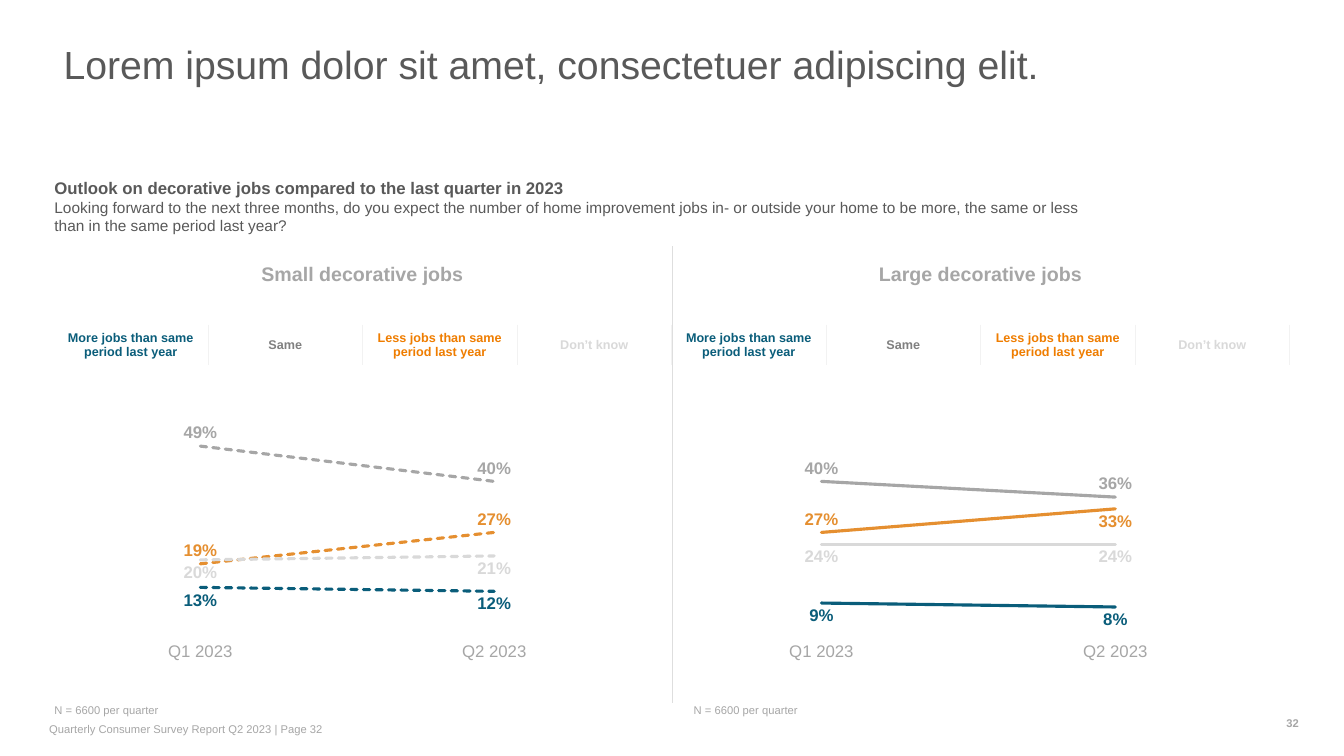
"""Build the slide on the outlook for small and large decorative jobs."""
from dataclasses import dataclass

from lxml import etree
from pptx import Presentation
from pptx.chart.data import CategoryChartData
from pptx.dml.color import RGBColor
from pptx.enum.chart import XL_CHART_TYPE, XL_LABEL_POSITION, XL_MARKER_STYLE, XL_TICK_MARK
from pptx.enum.dml import MSO_LINE
from pptx.enum.shapes import MSO_CONNECTOR
from pptx.enum.text import MSO_ANCHOR, MSO_AUTO_SIZE, PP_ALIGN
from pptx.oxml import parse_xml
from pptx.oxml.ns import nsdecls, qn
from pptx.util import Inches, Pt

LINE_CHART = XL_CHART_TYPE.LINE
ABOVE, BELOW = XL_LABEL_POSITION.ABOVE, XL_LABEL_POSITION.BELOW
NO_MARKER, NO_TICK = XL_MARKER_STYLE.NONE, XL_TICK_MARK.NONE
SQUARE_DOT = MSO_LINE.SQUARE_DOT
STRAIGHT = MSO_CONNECTOR.STRAIGHT
TOP, MIDDLE = MSO_ANCHOR.TOP, MSO_ANCHOR.MIDDLE
NO_AUTO_SIZE = MSO_AUTO_SIZE.NONE
LEFT, CENTER = PP_ALIGN.LEFT, PP_ALIGN.CENTER

FONT = "Arial"
DARK, GREY, PALE, BORDER = "595959", "A6A6A6", "D9D9D9", "F2F2F2"
NO_STYLE = "{2D5ABB26-0587-4C30-8999-92F81FD0307C}"
QUARTERS = ("Q1 2023", "Q2 2023")
PLOT_LAYOUT = {"layoutTarget": "inner", "xMode": "edge", "yMode": "edge",
               "x": "0", "y": "0", "w": "1", "h": "0.912"}


@dataclass(frozen=True)
class Answer:
    """An answer option with its heading colour, line colour and label side."""
    text: str
    heading_color: str
    line_color: str
    label_position: XL_LABEL_POSITION


@dataclass(frozen=True)
class Panel:
    """One half of the slide: heading, answer table, line chart and base size."""
    heading: str
    table_left: float
    chart_left: float
    note_left: float
    dashed: bool
    shares: tuple[tuple[float, float], ...]
    labels_moved_below: tuple[tuple[int, int], ...] = ()


@dataclass(frozen=True)
class Line:
    """A paragraph of text with its look."""
    text: str
    size: float
    color: str
    bold: bool = False
    align: PP_ALIGN = LEFT
    space_after: float = 0


ANSWERS = (
    Answer("More jobs than same period last year", "0A5D7A", "0A5D7A", BELOW),
    Answer("Same", "808080", GREY, ABOVE),
    Answer("Less jobs than same period last year", "EF7D00", "E58F30", ABOVE),
    Answer("Don’t know", PALE, PALE, BELOW),
)
PANELS = (
    Panel("Small decorative jobs", 0.53, 0.53, 0.54, True,
          ((0.13, 0.12), (0.49, 0.4), (0.19, 0.27), (0.2, 0.21))),
    Panel("Large decorative jobs", 6.66, 6.69, 6.88, False,
          ((0.09, 0.08), (0.4, 0.36), (0.27, 0.33), (0.24, 0.24)), ((2, 1),)),
)


def rgb(color: str) -> RGBColor:
    """Turn a hex string into a colour."""
    return RGBColor.from_string(color)


def set_font(font, size: float, color: str, bold: bool = False) -> None:
    """Format a font."""
    font.name, font.size, font.bold = FONT, Pt(size), bold
    font.color.rgb = rgb(color)


def write(text_frame, lines: tuple[Line, ...]) -> None:
    """Fill a text frame with formatted paragraphs."""
    for index, line in enumerate(lines):
        paragraph = text_frame.add_paragraph() if index else text_frame.paragraphs[0]
        paragraph.text = line.text
        paragraph.alignment = line.align
        paragraph.space_after = Pt(line.space_after)
        set_font(paragraph.font, line.size, line.color, line.bold)


def add_text(slide, box: tuple[float, ...], *lines: Line, inset: bool = False) -> None:
    """Add a text box; without inset its text is centred vertically on the box."""
    text_frame = slide.shapes.add_textbox(*map(Inches, box)).text_frame
    text_frame.word_wrap = True
    if not inset:
        text_frame.margin_left = text_frame.margin_right = 0
        text_frame.margin_top = text_frame.margin_bottom = 0
        text_frame.vertical_anchor = MIDDLE
    write(text_frame, lines)


def add_title(slide, text: str) -> None:
    """Place and format the title placeholder."""
    title = slide.shapes.title
    title.left, title.top, title.width, title.height = map(Inches, (0.53, 0.4, 12.61, 0.98))
    title.text_frame.vertical_anchor = TOP
    title.text_frame.auto_size = NO_AUTO_SIZE
    write(title.text_frame, (Line(text, 28, DARK, space_after=4),))
    title.text_frame.paragraphs[0].line_spacing = 0.9


def add_divider(slide) -> None:
    """Draw the vertical rule between the panels."""
    x = Inches(6.67)
    divider = slide.shapes.add_connector(STRAIGHT, x, Inches(6.97), x, Inches(2.44))
    divider.line.color.rgb = rgb("DEDEDE")
    divider.line.width = Pt(0.75)
    etree.SubElement(divider._element.spPr, qn("a:effectLst"))


def add_answer_table(slide, left: float) -> None:
    """Add the one-row table that serves as the chart legend."""
    frame = slide.shapes.add_table(1, len(ANSWERS), *map(Inches, (left, 3.22, 6.13, 0.4)))
    table = frame.table
    table.first_row = table.horz_banding = False
    table._tbl.tblPr.find(qn("a:tableStyleId")).text = NO_STYLE
    for cell, answer in zip(table.rows[0].cells, ANSWERS):
        cell.vertical_anchor = MIDDLE
        write(cell.text_frame, (Line(answer.text, 9, answer.heading_color, True, CENTER),))
        cell._tc.get_or_add_tcPr().append(parse_xml(
            f'<a:lnR {nsdecls("a")} w="{Pt(0.5)}"><a:solidFill>'
            f'<a:srgbClr val="{BORDER}"/></a:solidFill></a:lnR>'))
        cell.fill.background()


def set_plot_layout(chart) -> None:
    """Fix the inner plot area within the chart frame."""
    plot_area = chart._chartSpace.chart.plotArea
    for old_layout in plot_area.findall(qn("c:layout")):
        plot_area.remove(old_layout)
    layout = etree.Element(qn("c:layout"))
    manual = etree.SubElement(layout, qn("c:manualLayout"))
    for name, value in PLOT_LAYOUT.items():
        etree.SubElement(manual, qn(f"c:{name}")).set("val", value)
    plot_area.insert(0, layout)


def format_axes(chart) -> None:
    """Show only the quarter names and scale the values from 0 to 100%."""
    values, quarters = chart.value_axis, chart.category_axis
    values.minimum_scale, values.maximum_scale = 0, 1
    values.has_major_gridlines = values.visible = False
    quarters.major_tick_mark = quarters.minor_tick_mark = NO_TICK
    quarters.format.line.fill.background()
    set_font(quarters.tick_labels.font, 12, GREY)


def add_share_chart(slide, panel: Panel) -> None:
    """Add the line chart of answer shares per quarter."""
    data = CategoryChartData(number_format="0%")
    data.categories = QUARTERS
    for answer, shares in zip(ANSWERS, panel.shares):
        data.add_series(answer.text, shares)
    box = map(Inches, (panel.chart_left, 2.44, 5.83, 4.27))
    chart = slide.shapes.add_chart(LINE_CHART, *box, data).chart
    chart.has_legend = chart.has_title = False
    set_font(chart.font, 10, "000000")
    chart.plots[0].vary_by_categories = False
    set_plot_layout(chart)
    format_axes(chart)
    for series, answer in zip(chart.plots[0].series, ANSWERS):
        series.smooth = False
        series.marker.style = NO_MARKER
        series.format.line.color.rgb = rgb(answer.line_color)
        series.format.line.width = Pt(2.25)
        series._element.spPr.find(qn("a:ln")).set("cap", "rnd")
        if panel.dashed:
            series.format.line.dash_style = SQUARE_DOT
        labels = series.data_labels
        labels.show_value = True
        labels.number_format, labels.number_format_is_linked = "0%", False
        labels.position = answer.label_position
        set_font(labels.font, 12, answer.line_color, True)
    for answer_index, quarter_index in panel.labels_moved_below:
        label = chart.plots[0].series[answer_index].points[quarter_index].data_label
        set_font(label.font, 12, ANSWERS[answer_index].line_color, True)
        label.position = BELOW


def main() -> None:
    """Build and save the presentation."""
    presentation = Presentation()
    presentation.slide_width, presentation.slide_height = Inches(13.33), Inches(7.5)
    slide = presentation.slides.add_slide(presentation.slide_layouts.get_by_name("Title Only"))
    add_title(slide, "Lorem ipsum dolor sit amet, consectetuer adipiscing elit.")
    add_text(slide, (0.54, 1.85, 10.43, 0.39),
             Line("Outlook on decorative jobs compared to the last quarter in 2023", 12, DARK, True),
             Line("Looking forward to the next three months, do you expect the number of home "
                  "improvement jobs in- or outside your home to be more, the same or less than in "
                  "the same period last year?", 11, DARK))
    add_divider(slide)
    for panel in PANELS:
        add_share_chart(slide, panel)
        add_answer_table(slide, panel.table_left)
        add_text(slide, (panel.table_left, 2.55, 6.13, 0.34),
                 Line(panel.heading, 14, GREY, True, CENTER, 1), inset=True)
        add_text(slide, (panel.note_left, 6.98, 5.95, 0.13), Line("N = 6600 per quarter", 8, GREY))
    add_text(slide, (0.39, 7.12, 6.53, 0.3),
             Line("Quarterly Consumer Survey Report Q2 2023 | Page 32", 8, GREY), inset=True)
    add_text(slide, (12.7, 7.1, 0.24, 0.15), Line("32", 8, GREY, True, CENTER))
    presentation.save("out.pptx")


if __name__ == "__main__":
    main()
